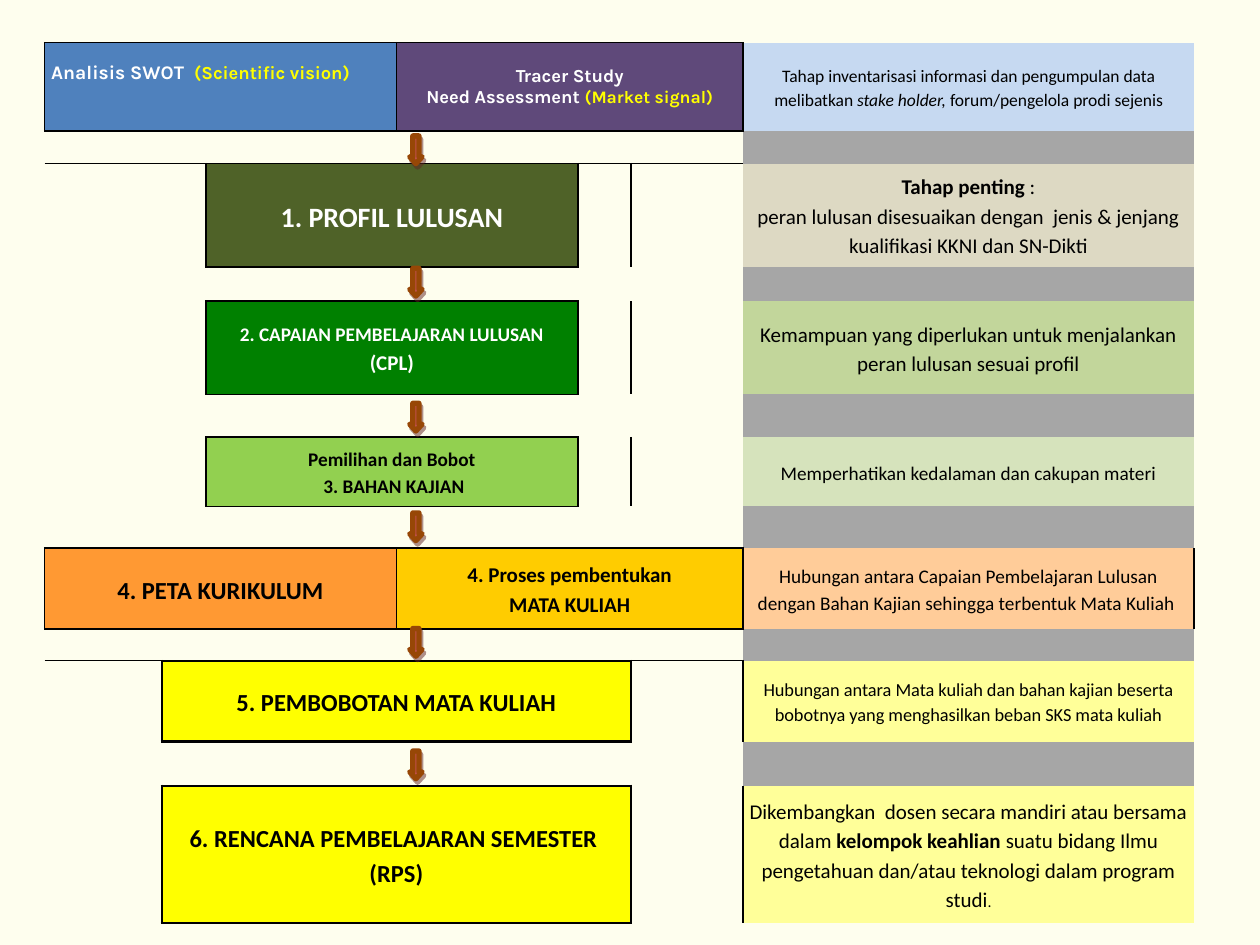
from lxml.etree import SubElement
from pptx import Presentation
from pptx.dml.color import RGBColor as Rgb
from pptx.enum.shapes import MSO_SHAPE as Shape
from pptx.enum.text import MSO_ANCHOR as Anchor, PP_ALIGN as Align
from pptx.oxml.ns import qn
from pptx.util import Cm, Pt

COLOURS = {
    "page": "FEFEEE", "black": "000000", "white": "FFFFFF", "yellow": "FFFF00",
    "blue": "4F81BD", "purple": "5F497A", "pale blue": "C6D9F1", "grey": "A6A6A6",
    "olive": "4F6228", "sand": "DDD9C3", "green": "008000", "sage": "C2D69B",
    "lime": "92D050", "pale green": "D6E3BC", "orange": "FF9933", "gold": "FFCC00",
    "peach": "FFCC99", "pale yellow": "FFFF99", "red": "C0504D", "brown": "974706",
    "shadow": "622423",
}
COLUMNS = [2.36, 0.89, 3.84, 3.66, 1.07, 2.26, 9.09]
ROWS = [1.78, 0.66, 2.08, 0.69, 1.88, 0.86, 1.4, 0.84, 1.63, 0.64, 1.63, 0.89, 2.77]
ARROW_TOPS = [2.74, 5.41, 8.13, 10.34, 12.67, 15.14]
NOTE_COLUMN = len(COLUMNS) - 1
NO_STYLE = "{2D5ABB26-0587-4C30-8999-92F81FD0307C}"
SIDES = {"L": (0, -1, "R"), "R": (0, 1, "L"), "T": (-1, 0, "B"), "B": (1, 0, "T")}

KARLA = {"name": "Karla", "bold": True}
BOLD = {"bold": True}

STEPS = [
    (0, 0, 2, "blue", "white", 1, "LRTB",
     [[("Analisis SWOT  ", 11, KARLA),
       ("(Scientific vision)", 10.5, KARLA | {"colour": "yellow"})]],
     {"align": Align.LEFT, "spacing": 1, "bottom": 0.54}),
    (0, 3, 5, "purple", "white", 1, "LTB",
     [[("Tracer Study", 10.5, KARLA)],
      [("Need Assessment ", 10.5, KARLA),
       ("(Market signal)", 10, KARLA | {"colour": "yellow"})]],
     {"spacing": 1}),
    (2, 2, 3, "olive", "white", 1, "LRTB", [[("1. PROFIL LULUSAN", 16, BOLD)]], {}),
    (4, 2, 3, "green", "white", 1, "LRTB",
     [[("2. CAPAIAN PEMBELAJARAN LULUSAN", 11, BOLD)], [("(CPL)", 12, BOLD)]], {}),
    (6, 2, 3, "lime", "black", 1, "LRTB",
     [[("Pemilihan dan Bobot", 11, BOLD)], [(" 3. BAHAN KAJIAN", 11, BOLD)]], {}),
    (8, 0, 2, "orange", "black", 1, "LRTB", [[("4. PETA KURIKULUM", 14, BOLD)]], {}),
    (8, 3, 5, "gold", "black", 1, "LRTB",
     [[("4. Proses pembentukan", 12, BOLD)], [("MATA KULIAH", 12, BOLD)]], {}),
    (10, 1, 4, "yellow", "black", 1.5, "LRTB",
     [[("5. PEMBOBOTAN MATA KULIAH", 14, BOLD)]], {}),
    (12, 1, 4, "yellow", "black", 1.5, "LRTB",
     [[("6. RENCANA PEMBELAJARAN SEMESTER ", 14, BOLD)], [("(RPS)", 14, BOLD)]], {}),
]

NOTES = [
    ("pale blue",
     [[("Tahap inventarisasi informasi dan pengumpulan data melibatkan ", 10, {}),
       ("stake holder, ", 10, {"italic": True}),
       ("forum/pengelola prodi sejenis", 10, {})]]),
    ("sand",
     [[("Tahap penting", 12, BOLD), (" :", 12, {})],
      [("peran lulusan disesuaikan dengan  jenis & jenjang kualifikasi KKNI dan SN-Dikti",
        12, {})]]),
    ("sage",
     [[("Kemampuan yang diperlukan untuk menjalankan peran lulusan sesuai profil", 12, {})]]),
    ("pale green", [[("Memperhatikan kedalaman dan cakupan materi", 11, {})]]),
    ("peach",
     [[("Hubungan antara Capaian Pembelajaran Lulusan dengan Bahan Kajian "
        "sehingga terbentuk Mata Kuliah ", 11, {})]]),
    ("pale yellow",
     [[("Hubungan antara Mata kuliah dan bahan kajian beserta bobotnya yang "
        "menghasilkan beban SKS mata kuliah", 10.5, {})]]),
    ("pale yellow",
     [[("Dikembangkan  dosen secara mandiri atau bersama dalam ", 12, {}),
       ("kelompok keahlian ", 12, BOLD),
       ("suatu bidang Ilmu pengetahuan dan/atau teknologi dalam program studi", 12, {}),
       (".", 9, {})]]),
]


def colour(name):
    return Rgb.from_string(COLOURS[name])


class FlowPage:
    def __init__(self, deck):
        self.page = deck.slides.add_slide(deck.slide_layouts[6])
        self.page.background.fill.solid()
        self.page.background.fill.fore_color.rgb = colour("page")
        self.borders = {}

    def add_grid(self, left, top):
        frame = self.page.shapes.add_table(len(ROWS), len(COLUMNS), Cm(left), Cm(top),
                                           Cm(sum(COLUMNS)), Cm(sum(ROWS)))
        self.table = frame.table
        self.table.first_row = self.table.horz_banding = False
        self.table._tbl.tblPr.find(qn("a:tableStyleId")).text = NO_STYLE
        for column, width in zip(self.table.columns, COLUMNS):
            column.width = Cm(width)
        for row, height in zip(self.table.rows, ROWS):
            row.height = Cm(height)
        margins = {"margin_left": Cm(0.13), "margin_right": Cm(0.13),
                   "margin_top": 0, "margin_bottom": 0, "vertical_anchor": Anchor.MIDDLE}
        for cell in self.table.iter_cells():
            for key, value in margins.items():
                setattr(cell, key, value)
            cell.fill.background()

    def fill_cell(self, row, column, fill):
        cell = self.table.cell(row, column)
        cell.fill.solid()
        cell.fill.fore_color.rgb = colour(fill)
        return cell

    def add_text(self, row, column, fill, ink, paragraphs,
                 align=Align.CENTER, spacing=1.15, bottom=0):
        cell = self.fill_cell(row, column, fill)
        cell.margin_bottom = Cm(bottom)
        for index, spans in enumerate(paragraphs):
            frame = cell.text_frame
            para = frame.add_paragraph() if index else frame.paragraphs[0]
            para.alignment = align
            para.line_spacing = spacing
            for text, size, changes in spans:
                span = para.add_run()
                span.text = text
                style = {"name": "Calibri", "bold": False, "colour": ink,
                         "size": Pt(size)} | changes
                span.font.color.rgb = colour(style.pop("colour"))
                for key, value in style.items():
                    setattr(span.font, key, value)

    def add_step(self, row, first, last, fill, ink, width, sides, paragraphs, layout):
        self.table.cell(row, first).merge(self.table.cell(row, last))
        self.add_text(row, first, fill, ink, paragraphs, **layout)
        for column in range(first, last + 1):
            for side in sides:
                if (side == "L" and column > first) or (side == "R" and column < last):
                    continue
                down, across, opposite = SIDES[side]
                self.borders[row, column, side] = width
                self.borders[row + down, column + across, opposite] = width

    def draw_borders(self):
        for row in range(len(ROWS)):
            for column in range(len(COLUMNS)):
                props = self.table.cell(row, column)._tc.get_or_add_tcPr()
                sides = [side for side in SIDES if (row, column, side) in self.borders]
                for index, side in enumerate(sides):
                    width = self.borders[row, column, side]
                    line = SubElement(props, qn(f"a:ln{side}"), w=str(Pt(width)))
                    fill = SubElement(line, qn("a:solidFill"))
                    SubElement(fill, qn("a:srgbClr"), val=COLOURS["black"])
                    props.insert(index, line)

    def shrink_empty_cells(self):
        for cell in self.table.iter_cells():
            if not cell.text_frame.text:
                SubElement(cell.text_frame.paragraphs[0]._p, qn("a:endParaRPr"), sz="800")

    def add_arrow(self, left, top):
        arrow = self.page.shapes.add_shape(Shape.DOWN_ARROW, Cm(left), Cm(top),
                                           Cm(0.25), Cm(0.56))
        arrow.adjustments[1] = 0.55
        arrow.fill.solid()
        arrow.fill.fore_color.rgb = colour("red")
        arrow.line.color.rgb = colour("brown")
        arrow.line.width = Pt(3)
        arrow.shadow.inherit = False
        effects = arrow._element.spPr.find(qn("a:effectLst"))
        shadow = SubElement(effects, qn("a:outerShdw"), blurRad="0", dist=str(Pt(2.2)),
                            dir=str(63 * 60000), algn="ctr", rotWithShape="0")
        tint = SubElement(shadow, qn("a:srgbClr"), val=COLOURS["shadow"])
        SubElement(tint, qn("a:alpha"), val="50000")


def main():
    deck = Presentation()
    deck.slide_width, deck.slide_height = Cm(25.4), Cm(19.05)
    flow = FlowPage(deck)
    flow.add_grid(0.9, 0.86)
    for step in STEPS:
        flow.add_step(*step)
    for index, (fill, paragraphs) in enumerate(NOTES):
        flow.add_text(2 * index, NOTE_COLUMN, fill, "black", paragraphs)
    for row in range(1, len(ROWS), 2):
        flow.fill_cell(row, NOTE_COLUMN, "grey")
    flow.draw_borders()
    flow.shrink_empty_cells()
    for top in ARROW_TOPS:
        flow.add_arrow(8.26, top)
    deck.save("out.pptx")


if __name__ == "__main__":
    main()
